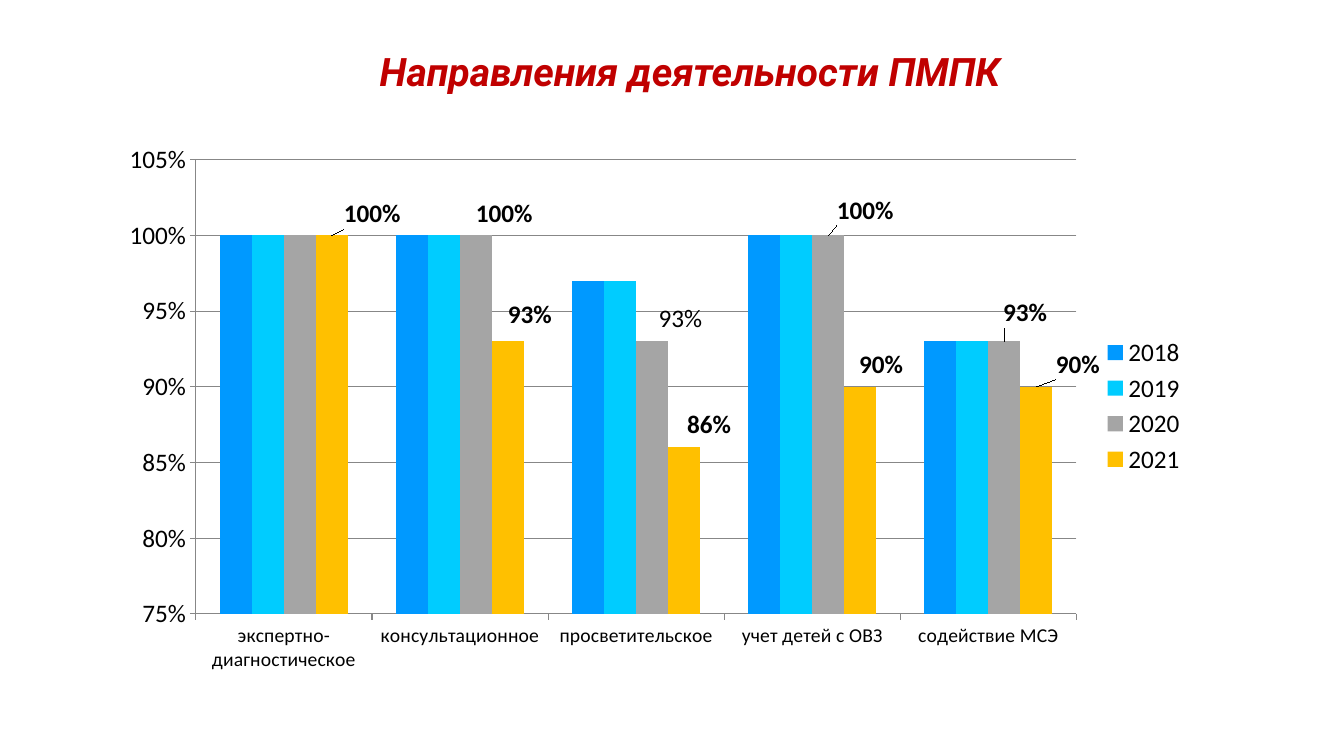
from dataclasses import dataclass

import pptx
import pptx.chart.data
import pptx.dml.color
import pptx.enum.chart
import pptx.enum.text
import pptx.oxml
import pptx.oxml.ns
import pptx.util

SLIDE_WIDTH = pptx.util.Inches(13.33)
SLIDE_HEIGHT = pptx.util.Inches(7.5)


@dataclass(frozen=True)
class Theme:
    title_font: str = "Roboto"
    chart_font: str = "Calibri"
    title_color: str = "C00000"
    text_color: str = "000000"
    line_color: str = "878787"
    title_size: float = 28
    chart_size: float = 18
    category_size: float = 14


@dataclass(frozen=True)
class Label:
    """A value label, shifted by percentages of the chart's size."""
    point: int
    right: float
    down: float
    bold: bool = True


@dataclass(frozen=True)
class Year:
    name: str
    values: tuple[float, ...]
    color: str
    labels: tuple[Label, ...] = ()


THEME = Theme()
DIRECTIONS = (
    "экспертно-диагностическое",
    "консультационное",
    "просветительское",
    "учет детей с ОВЗ",
    "содействие МСЭ",
)
YEARS = (
    Year("2018", (1, 1, 0.97, 1, 0.93), "0099FF"),
    Year("2019", (1, 1, 0.97, 1, 0.93), "00CCFF"),
    Year("2020", (1, 1, 0.93, 1, 0.93), "A5A5A5", (
        Label(1, 2.6, -0.4),
        Label(2, 2.6, -0.6, bold=False),
        Label(3, 3.4, -1.1),
        Label(4, 1.9, -1.7),
    )),
    Year("2021", (1, 0.93, 0.86, 0.9, 0.9), "FFC000", (
        Label(0, 3.7, -0.4),
        Label(1, 2, -1.3),
        Label(2, 2.3, -0.6),
        Label(3, 1.9, -0.6),
        Label(4, 3.8, -0.6),
    )),
)


def rgb(color: str) -> pptx.dml.color.RGBColor:
    return pptx.dml.color.RGBColor.from_string(color)


def frame(left: float, top: float, width: float, height: float) -> tuple[int, ...]:
    """Turn shares of the slide's size into left, top, width and height."""
    return (int(left * SLIDE_WIDTH), int(top * SLIDE_HEIGHT),
            int(width * SLIDE_WIDTH), int(height * SLIDE_HEIGHT))


def manual_layout(**settings: object):
    """Build a chart layout element from its settings, in schema order."""
    inner = "".join(f'<c:{name} val="{value}"/>' for name, value in settings.items())
    return pptx.oxml.parse_xml(
        f'<c:layout {pptx.oxml.ns.nsdecls("c")}>'
        f"<c:manualLayout>{inner}</c:manualLayout></c:layout>")


def style_font(font, size: float, name: str, color: str, bold: bool = False) -> None:
    font.size = pptx.util.Pt(size)
    font.name = name
    font.bold = bold
    font.color.rgb = rgb(color)


def style_chart_font(font, size: float = THEME.chart_size, bold: bool = False) -> None:
    style_font(font, size, THEME.chart_font, THEME.text_color, bold)


def add_title(page) -> None:
    title = page.shapes.title
    title.left, title.top, title.width, title.height = frame(0.275, 0.028, 0.675, 0.061)
    box = title.text_frame
    box.text = "Направления деятельности ПМПК"
    box.auto_size = pptx.enum.text.MSO_AUTO_SIZE.NONE
    box.vertical_anchor = pptx.enum.text.MSO_ANCHOR.TOP
    box.margin_top = pptx.util.Inches(0.31)
    box.margin_bottom = 0
    para = box.paragraphs[0]
    para.alignment = pptx.enum.text.PP_ALIGN.LEFT
    para.line_spacing = 0.9
    span = para.runs[0]
    style_font(span.font, THEME.title_size, THEME.title_font, THEME.title_color, True)
    span.font.italic = True


def style_axes(chart) -> None:
    values, categories = chart.value_axis, chart.category_axis
    values.minimum_scale, values.maximum_scale = 0.75, 1.05
    values.major_unit = 0.05
    values.has_major_gridlines = True
    values.tick_labels.number_format = "0%"
    values.tick_labels.number_format_is_linked = False
    style_chart_font(values.tick_labels.font)
    style_chart_font(categories.tick_labels.font, THEME.category_size)
    for axis in (values, categories):
        axis.major_tick_mark = pptx.enum.chart.XL_TICK_MARK.OUTSIDE
    for part in (values, categories, values.major_gridlines):
        part.format.line.color.rgb = rgb(THEME.line_color)
        part.format.line.width = pptx.util.Pt(0.75)


def style_series(series, year: Year) -> None:
    series.format.fill.solid()
    series.format.fill.fore_color.rgb = rgb(year.color)
    if not year.labels:
        return
    series.data_labels.show_value = False
    for label in year.labels:
        data_label = series.points[label.point].data_label
        style_chart_font(data_label.font, bold=label.bold)
        data_label.position = pptx.enum.chart.XL_LABEL_POSITION.OUTSIDE_END
        index = series._element.xpath(
            f'c:dLbls/c:dLbl/c:idx[@val="{label.point}"]')[0]
        index.addnext(manual_layout(x=round(label.right / 100, 3),
                                    y=round(label.down / 100, 3)))


def add_activity_chart(page) -> None:
    data = pptx.chart.data.CategoryChartData(number_format="0%")
    data.categories = DIRECTIONS
    for year in YEARS:
        data.add_series(year.name, year.values)
    chart = page.shapes.add_chart(
        pptx.enum.chart.XL_CHART_TYPE.COLUMN_CLUSTERED,
        *frame(0.081, 0.175, 0.809, 0.724), data).chart
    chart.has_title = False
    style_chart_font(chart.font)
    chart.has_legend = True
    chart.legend.position = pptx.enum.chart.XL_LEGEND_POSITION.RIGHT
    chart.legend.include_in_layout = False
    style_chart_font(chart.legend.font)
    style_axes(chart)

    plot = chart.plots[0]
    plot.gap_width, plot.overlap = 150, 0
    plot.vary_by_categories = False
    for series, year in zip(plot.series, YEARS):
        style_series(series, year)

    area = chart._chartSpace.xpath("c:chart/c:plotArea")[0]
    for layout in area.xpath("c:layout"):
        area.remove(layout)
    area.insert(0, manual_layout(layoutTarget="inner", xMode="edge", yMode="edge",
                                 x=0.08, y=0.05, w=0.81, h=0.83))


def main() -> None:
    deck = pptx.Presentation()
    deck.slide_width, deck.slide_height = SLIDE_WIDTH, SLIDE_HEIGHT
    page = deck.slides.add_slide(deck.slide_layouts.get_by_name("Title Only"))
    add_title(page)
    add_activity_chart(page)
    deck.save("out.pptx")


if __name__ == "__main__":
    main()
